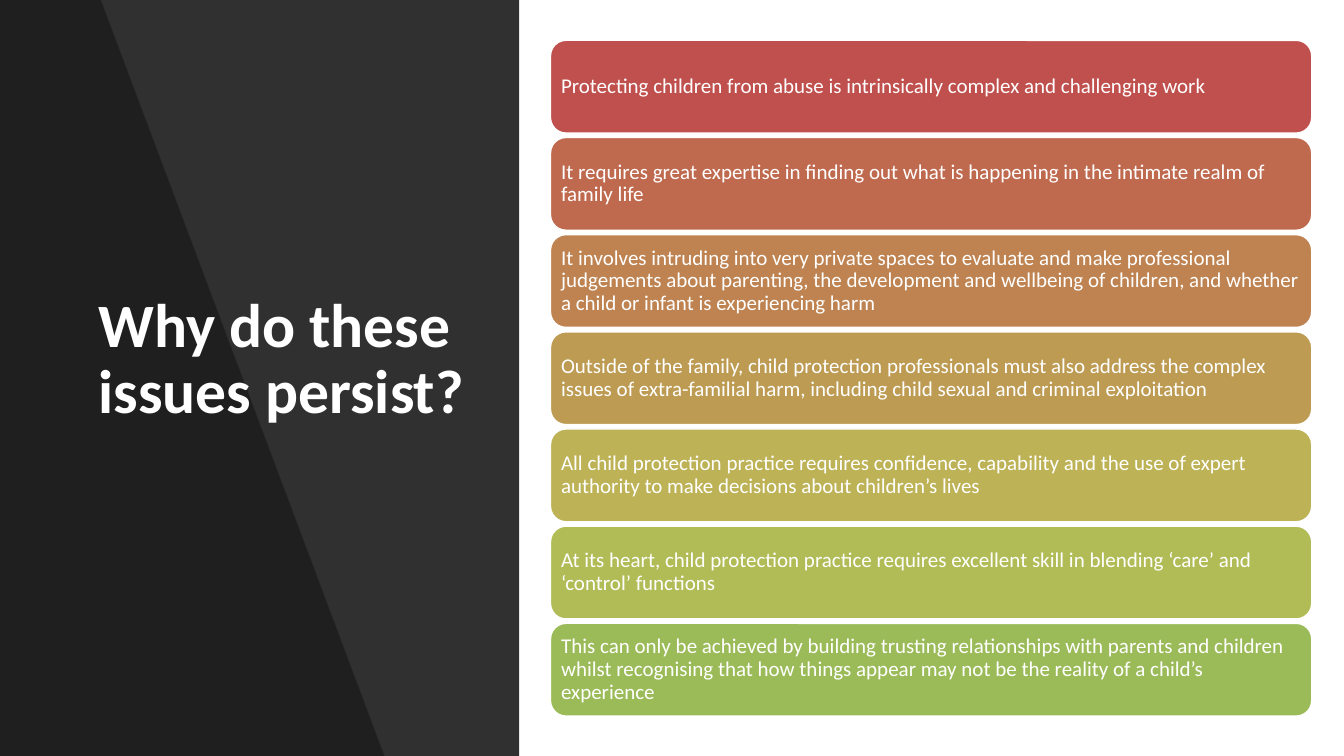
from lxml import etree
from pptx import Presentation
from pptx.dml.color import RGBColor
from pptx.enum.shapes import MSO_SHAPE
from pptx.enum.text import MSO_ANCHOR, PP_ALIGN
from pptx.oxml.ns import qn
from pptx.util import Inches, Pt

RECTANGLE = MSO_SHAPE.RECTANGLE
ROUNDED = MSO_SHAPE.ROUNDED_RECTANGLE
MIDDLE = MSO_ANCHOR.MIDDLE
LEFT = PP_ALIGN.LEFT

WIDTH, HEIGHT = 13.33, 7.5
PANEL_WIDTH = 5.15
SLANT_TOP, SLANT_BOTTOM = 0.95, 3.59
CARD_LEFT, CARD_TOP = 5.46, 0.4
CARD_WIDTH, CARD_HEIGHT = 7.55, 0.92
CARD_PITCH = 0.964

FONT = "Calibri"
BLACK = RGBColor(0x00, 0x00, 0x00)
WHITE = RGBColor(0xFF, 0xFF, 0xFF)

TITLE = "Why do these issues persist?"
REASONS = [
    (RGBColor(0xC0, 0x50, 0x4D),
     "Protecting children from abuse is intrinsically complex and challenging work"),
    (RGBColor(0xBF, 0x6A, 0x4F),
     "It requires great expertise in finding out what is happening in the "
     "intimate realm of family life"),
    (RGBColor(0xBE, 0x83, 0x51),
     "It involves intruding into very private spaces to evaluate and make "
     "professional judgements about parenting, the development and wellbeing of "
     "children, and whether a child or infant is experiencing harm"),
    (RGBColor(0xBD, 0x9B, 0x53),
     "Outside of the family, child protection professionals must also address the "
     "complex issues of extra-familial harm, including child sexual and criminal "
     "exploitation"),
    (RGBColor(0xBD, 0xB2, 0x55),
     "All child protection practice requires confidence, capability and the use of "
     "expert authority to make decisions about children’s lives"),
    (RGBColor(0xB1, 0xBC, 0x57),
     "At its heart, child protection practice requires excellent skill in blending "
     "‘care’ and ‘control’ functions"),
    (RGBColor(0x9B, 0xBB, 0x59),
     "This can only be achieved by building trusting relationships with parents and "
     "children whilst recognising that how things appear may not be the reality of "
     "a child’s experience"),
]


def fill_translucent(shape, color, opacity):
    """Give a shape a borderless, partly transparent fill."""
    shape.shadow.inherit = False
    shape.line.fill.background()
    shape.fill.solid()
    shape.fill.fore_color.rgb = color
    color_element = shape.fill._xPr.find(qn("a:solidFill"))[0]
    alpha = etree.SubElement(color_element, qn("a:alpha"))
    alpha.set("val", str(opacity * 1000))


def write_text(shape, text, size, bold=False):
    """Set white, left-aligned, vertically centred text in a shape."""
    frame = shape.text_frame
    frame.word_wrap = True
    frame.vertical_anchor = MIDDLE
    paragraph = frame.paragraphs[0]
    paragraph.text = text
    paragraph.alignment = LEFT
    paragraph.line_spacing = 0.9
    paragraph.font.name = FONT
    paragraph.font.size = Pt(size)
    paragraph.font.bold = bold
    paragraph.font.color.rgb = WHITE


def add_panel(slide):
    """Draw the dark title panel and its slanted overlay."""
    panel = slide.shapes.add_shape(
        RECTANGLE, 0, 0, Inches(PANEL_WIDTH), Inches(HEIGHT))
    fill_translucent(panel, BLACK, 81)
    builder = slide.shapes.build_freeform(0, 0, scale=Inches(1))
    builder.add_line_segments(
        [(SLANT_TOP, 0), (SLANT_BOTTOM, HEIGHT), (0, HEIGHT)], close=True)
    fill_translucent(builder.convert_to_shape(), BLACK, 35)


def add_title(slide):
    """Place the title over the panel."""
    title = slide.shapes.add_textbox(
        Inches(0.88), Inches(0.7), Inches(3.91), Inches(5.75))
    write_text(title, TITLE, 44, bold=True)


def add_card(slide, row, color, text):
    """Draw one reason card at the given row of the stack."""
    card = slide.shapes.add_shape(
        ROUNDED, Inches(CARD_LEFT), Inches(CARD_TOP + row * CARD_PITCH),
        Inches(CARD_WIDTH), Inches(CARD_HEIGHT))
    card.shadow.inherit = False
    card.fill.solid()
    card.fill.fore_color.rgb = color
    card.line.color.rgb = WHITE
    card.line.width = Pt(1)
    frame = card.text_frame
    frame.margin_left = frame.margin_right = Inches(0.06)
    frame.margin_top = frame.margin_bottom = Inches(0.06)
    write_text(card, text, 15)


def main():
    """Build the slide and save it."""
    presentation = Presentation()
    presentation.slide_width = Inches(WIDTH)
    presentation.slide_height = Inches(HEIGHT)
    slide = presentation.slides.add_slide(presentation.slide_layouts[6])
    add_panel(slide)
    add_title(slide)
    for row, (color, text) in enumerate(REASONS):
        add_card(slide, row, color, text)
    presentation.save("out.pptx")


if __name__ == "__main__":
    main()
